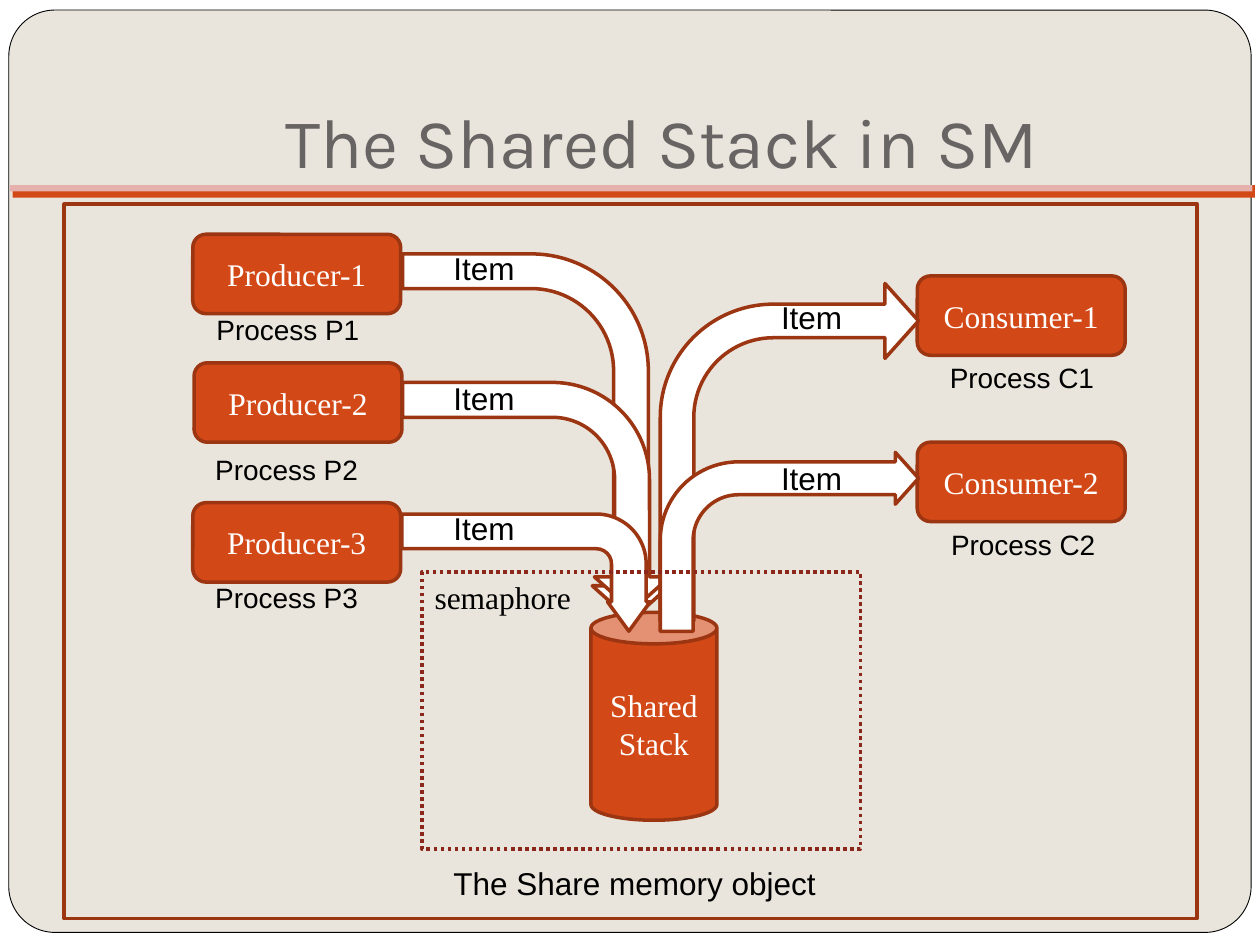
from dataclasses import dataclass
from pptx import Presentation
from pptx.dml.color import RGBColor as RGB
from pptx.enum.dml import MSO_LINE as Dash
from pptx.enum.shapes import MSO_SHAPE as Kind
from pptx.enum.text import MSO_ANCHOR as Anchor, MSO_AUTO_SIZE as Fit, PP_ALIGN as Align
from pptx.util import Inches, Pt


@dataclass
class Theme:
    paper: str = "E9E5DC"
    white: str = "FFFFFF"
    black: str = "000000"
    grey: str = "696464"
    red: str = "D34817"
    pink: str = "E6B1AC"
    edge: str = "9C3511"
    dots: str = "8C281B"
    sans: str = "Arial"
    serif: str = "Times New Roman"
    head: str = "Karla"
    big: int = 40
    mid: int = 18
    small: int = 16


theme = Theme()
deck = Presentation()
deck.slide_width, deck.slide_height = Inches(10), Inches(7.5)
slide = deck.slides.add_slide(deck.slide_layouts[5])
shapes = slide.shapes


def write(box, text, face, size, color, align):
    frame = box.text_frame
    frame.text = text
    frame.word_wrap = True
    for para in frame.paragraphs:
        para.alignment = align
        font = para.font
        font.name, font.size = face, Pt(size)
        font.color.rgb = RGB.from_string(color)
    return frame


def draw(kind, at, fill=None, line=None, width=2, text=""):
    box = shapes.add_shape(kind, *map(Inches, at))
    box.shadow.inherit = False
    if fill:
        box.fill.solid()
        box.fill.fore_color.rgb = RGB.from_string(fill)
    else:
        box.fill.background()
    if line:
        box.line.color.rgb = RGB.from_string(line)
        box.line.width = Pt(width)
    else:
        box.line.fill.background()
    if text:
        write(box, text, theme.serif, theme.mid, theme.white, Align.CENTER)
    return box


# Backdrop
back = slide.background.fill
back.solid()
back.fore_color.rgb = RGB.from_string(theme.paper)
draw(Kind.RECTANGLE, (0, 0, 10, 7.5), theme.white)
panel = draw(Kind.ROUNDED_RECTANGLE, (0.07, 0.08, 9.86, 7.32), theme.paper, theme.black, 0.5)
panel.adjustments[0] = 0.05
draw(Kind.RECTANGLE, (0.1, 1.47, 9.86, 0.1), theme.red)
draw(Kind.RECTANGLE, (0.08, 1.47, 9.86, 0.05), theme.pink)

# Title, raised above the backdrop
title = shapes.title
title.left, title.top, title.width, title.height = map(Inches, (1, 0.3, 8.5, 1.25))
frame = write(title, "The Shared Stack in SM", theme.head, theme.big, theme.grey, Align.CENTER)
frame.vertical_anchor = Anchor.BOTTOM
frame.margin_bottom = Inches(0.1)
shapes._spTree.append(title._element)

# Shared stack, producers and consumers
draw(Kind.CAN, (4.69, 4.86, 1, 1.65), theme.red, theme.edge, text="Shared\nStack")
nodes = [
    ("Producer-1", 1.53, 1.86), ("Producer-2", 1.54, 2.88), ("Producer-3", 1.53, 3.99),
    ("Consumer-1", 7.28, 2.19), ("Consumer-2", 7.28, 3.51),
]
for name, x, y in nodes:
    draw(Kind.ROUNDED_RECTANGLE, (x, y, 1.65, 0.63), theme.red, theme.edge, text=name)

# Bent arrows into and out of the stack
flows = [
    ((2.8, 2.41, 2.91, 2.12), 90, (0.13, 0.145, 0.13, 0.438)),
    ((3.35, 2.88, 1.81, 2.12), 90, (0.153, 0.165, 0.147, 0.426)),
    ((3.71, 3.56, 0.93, 1.97), 90, (0.296, 0.182, 0.25, 0.426)),
    ((5.24, 2.25, 2.05, 2.68), 0, (0.13, 0.145, 0.13, 0.438)),
    ((5.24, 3.59, 2.05, 1.42), 0, (0.184, 0.145, 0.13, 0.438)),
]
for at, turn, bends in flows:
    arrow = draw(Kind.BENT_ARROW, at, theme.white, theme.edge)
    arrow.rotation = turn
    for i, bend in enumerate(bends):
        arrow.adjustments[i] = bend

# Semaphore and outer frame
guard = draw(Kind.RECTANGLE, (3.35, 4.54, 3.48, 2.2), line=theme.dots)
guard.line.dash_style = Dash.ROUND_DOT
frame = write(guard, "semaphore", theme.serif, theme.mid, theme.black, Align.LEFT)
frame.vertical_anchor = Anchor.TOP
draw(Kind.RECTANGLE, (0.51, 1.62, 8.99, 5.67), line=theme.edge)

# Labels
items = [(3.5, 1.93), (3.5, 2.96), (3.5, 3.99), (6.1, 2.32), (6.1, 3.59)]
procs = [
    ("P1", 1.62, 2.43), ("P2", 1.61, 3.54), ("P3", 1.61, 4.56),
    ("C1", 7.44, 2.81), ("C2", 7.45, 4.14),
]
notes = [("Item", x, y, 0.79, 0.4, theme.mid) for x, y in items]
notes += [(f"Process {tag}", x, y, 1.57, 0.37, theme.small) for tag, x, y in procs]
notes.append(("The Share memory object", 3.5, 6.81, 3.19, 0.4, theme.mid))
for text, x, y, w, h, size in notes:
    box = shapes.add_textbox(Inches(x), Inches(y), Inches(w), Inches(h))
    frame = write(box, text, theme.sans, size, theme.black, Align.LEFT)
    frame.auto_size = Fit.SHAPE_TO_FIT_TEXT

deck.save("out.pptx")
